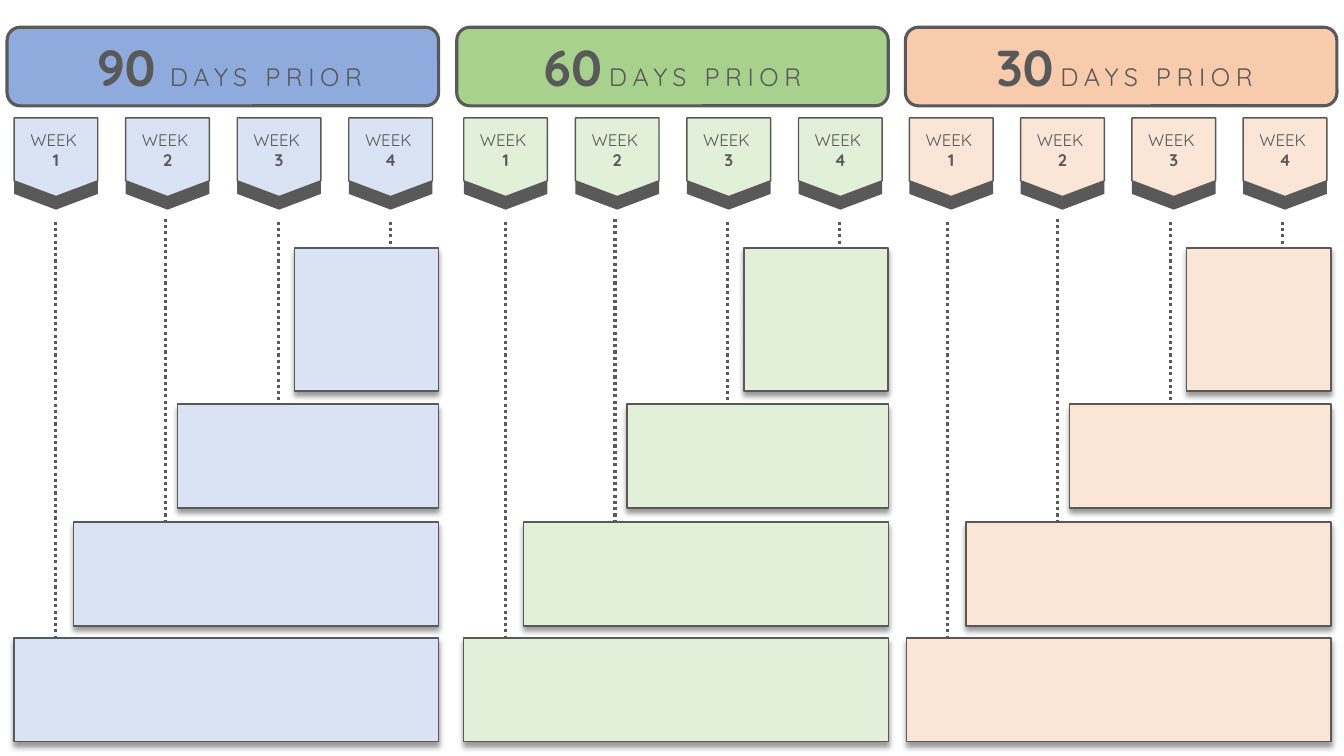
from lxml import etree
from pptx import Presentation
from pptx.dml.color import RGBColor
from pptx.enum.dml import MSO_LINE
from pptx.enum.shapes import MSO_CONNECTOR, MSO_SHAPE
from pptx.enum.text import MSO_ANCHOR, PP_ALIGN
from pptx.oxml.ns import qn
from pptx.util import Inches, Pt

ROUNDED, RECT = MSO_SHAPE.ROUNDED_RECTANGLE, MSO_SHAPE.RECTANGLE
TAG = MSO_SHAPE.FLOWCHART_OFFPAGE_CONNECTOR
STRAIGHT, DOTTED = MSO_CONNECTOR.STRAIGHT, MSO_LINE.ROUND_DOT
CENTER, MIDDLE = PP_ALIGN.CENTER, MSO_ANCHOR.MIDDLE

FONT = "Quicksand"
COLORS = {
    "ink": "595959", "white": "FFFFFF", "shadow": "000000",
    "blue": "8FAADC", "pale blue": "DAE3F3",
    "green": "A9D18E", "pale green": "E2F0D9",
    "orange": "F8CBAD", "pale orange": "FBE5D6",
}

# Heading run styles: size, bold, letter spacing in points
RUN_STYLES = {
    "space": (18, False, 0),
    "wide space": (36, False, 0),
    "number": (36, True, 0),
    "label": (18, False, 4),
}

LABEL = ("DAYS PRIOR", "label")
PERIODS = [
    {"color": "blue", "heading_left": 0.07, "tags": (0.14, 3.46), "bars_left": 0.14,
     "heading": [(" ", "wide space"), ("90 ", "number"), LABEL]},
    {"color": "green", "heading_left": 4.53, "tags": (4.6, 7.92), "bars_left": 4.6,
     "heading": [("60", "number"), (" ", "space"), LABEL]},
    {"color": "orange", "heading_left": 8.98, "tags": (9.02, 12.33), "bars_left": 8.99,
     "heading": [(" ", "space"), ("30", "number"), (" ", "space"), LABEL]},
]

# Each week: bar offset, bar top, bar height, dotted line offset, line top
WEEKS = [
    (0, 6.33, 1.03, 0.41, 2.2),
    (0.59, 5.18, 1.03, 1.5, 2.17),
    (1.62, 4.01, 1.03, 2.62, 2.2),
    (2.78, 2.46, 1.42, 3.73, 2.2),
]

HEADING_TOP, HEADING_WIDTH, BOX_HEIGHT = 0.27, 4.28, 0.78
TAG_TOP, TAG_WIDTH, TAG_DROP = 1.17, 0.83, 0.13
BARS_WIDTH = 4.21


def rgb(name):
    return RGBColor.from_string(COLORS[name])


def add_box(slide, preset, left, top, width, height, fill, line_width):
    box = slide.shapes.add_shape(
        preset, Inches(left), Inches(top), Inches(width), Inches(height))
    box.shadow.inherit = False
    box.fill.solid()
    box.fill.fore_color.rgb = rgb(fill)
    if line_width:
        box.line.color.rgb = rgb("ink")
        box.line.width = Pt(line_width)
    else:
        box.line.fill.background()
    return box


def centered_paragraph(box):
    box.text_frame.vertical_anchor = MIDDLE
    paragraph = box.text_frame.paragraphs[0]
    paragraph.alignment = CENTER
    paragraph.font.name = FONT
    paragraph.font.color.rgb = rgb("ink")
    return paragraph


def add_run(paragraph, text, size, bold):
    run = paragraph.add_run()
    run.text = text
    run.font.name = FONT
    run.font.size = Pt(size)
    run.font.bold = bold
    run.font.color.rgb = rgb("ink")
    return run


def add_color(parent, name):
    fill = etree.SubElement(parent, qn("a:solidFill"))
    return etree.SubElement(fill, qn("a:srgbClr"), val=COLORS[name])


def outline_text(run):
    outline = etree.Element(qn("a:ln"), w=str(Pt(1.5)))
    add_color(outline, "white")
    run.font._element.insert(0, outline)


def drop_shadow(box):
    effects = box._element.spPr.find(qn("a:effectLst"))
    shadow = etree.SubElement(
        effects, qn("a:outerShdw"), blurRad=str(Pt(4)), dist=str(Pt(3)),
        dir="5400000", algn="t", rotWithShape="0")
    color = etree.SubElement(shadow, qn("a:srgbClr"), val=COLORS["shadow"])
    etree.SubElement(color, qn("a:alpha"), val="40000")


def add_heading(slide, period):
    box = add_box(slide, ROUNDED, period["heading_left"], HEADING_TOP,
                  HEADING_WIDTH, BOX_HEIGHT, period["color"], 2.25)
    paragraph = centered_paragraph(box)
    for text, style in period["heading"]:
        size, bold, spacing = RUN_STYLES[style]
        run = add_run(paragraph, text, size, bold)
        if spacing:
            run.font._element.set("spc", str(spacing * 100))
        if style == "number":
            outline_text(run)


def add_week_tag(slide, left, number, fill):
    add_box(slide, TAG, left, TAG_TOP + TAG_DROP, TAG_WIDTH, BOX_HEIGHT, "ink", 0)
    tag = add_box(slide, TAG, left, TAG_TOP, TAG_WIDTH, BOX_HEIGHT, fill, 1)
    paragraph = centered_paragraph(tag)
    add_run(paragraph, "WEEK ", 12, False)
    paragraph.add_line_break()
    add_run(paragraph, str(number), 12, True)


def add_dotted_line(slide, x, top, bottom):
    line = slide.shapes.add_connector(
        STRAIGHT, Inches(x), Inches(top), Inches(x), Inches(bottom))
    line.line.color.rgb = rgb("ink")
    line.line.width = Pt(2.25)
    line.line.dash_style = DOTTED
    etree.SubElement(line._element.spPr, qn("a:effectLst"))


def add_period(slide, period):
    add_heading(slide, period)
    pale = "pale " + period["color"]
    first_tag, last_tag = period["tags"]
    pitch = (last_tag - first_tag) / (len(WEEKS) - 1)
    left = period["bars_left"]
    for index, (offset, top, height, line_offset, line_top) in enumerate(WEEKS):
        add_week_tag(slide, first_tag + index * pitch, index + 1, pale)
        add_dotted_line(slide, left + line_offset, line_top, top + 0.15)
        bar = add_box(slide, RECT, left + offset, top, BARS_WIDTH - offset,
                      height, pale, 1)
        drop_shadow(bar)


def main():
    deck = Presentation()
    deck.slide_width, deck.slide_height = Inches(13.33), Inches(7.5)
    slide = deck.slides.add_slide(deck.slide_layouts[6])
    for period in PERIODS:
        add_period(slide, period)
    deck.save("out.pptx")


if __name__ == "__main__":
    main()
